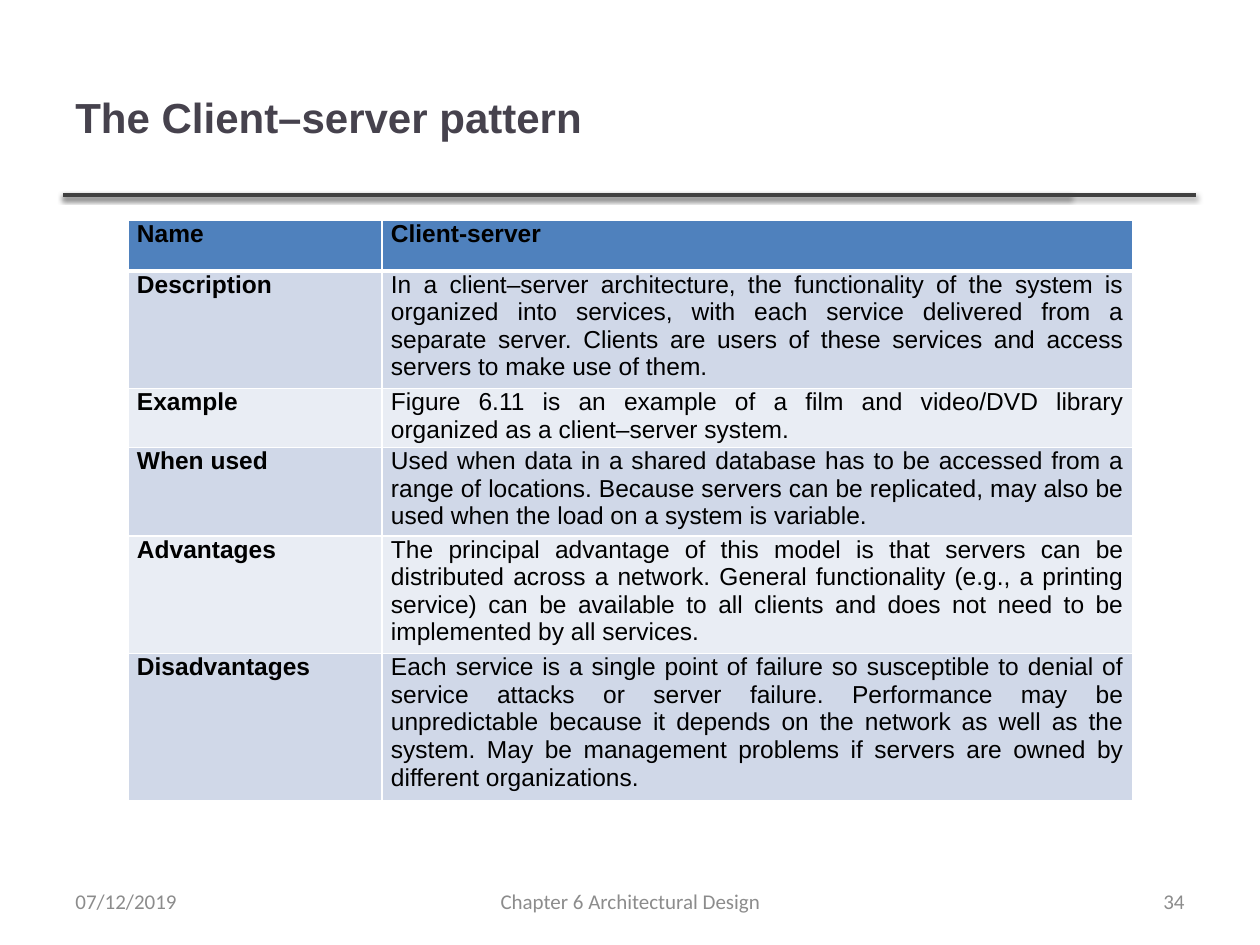
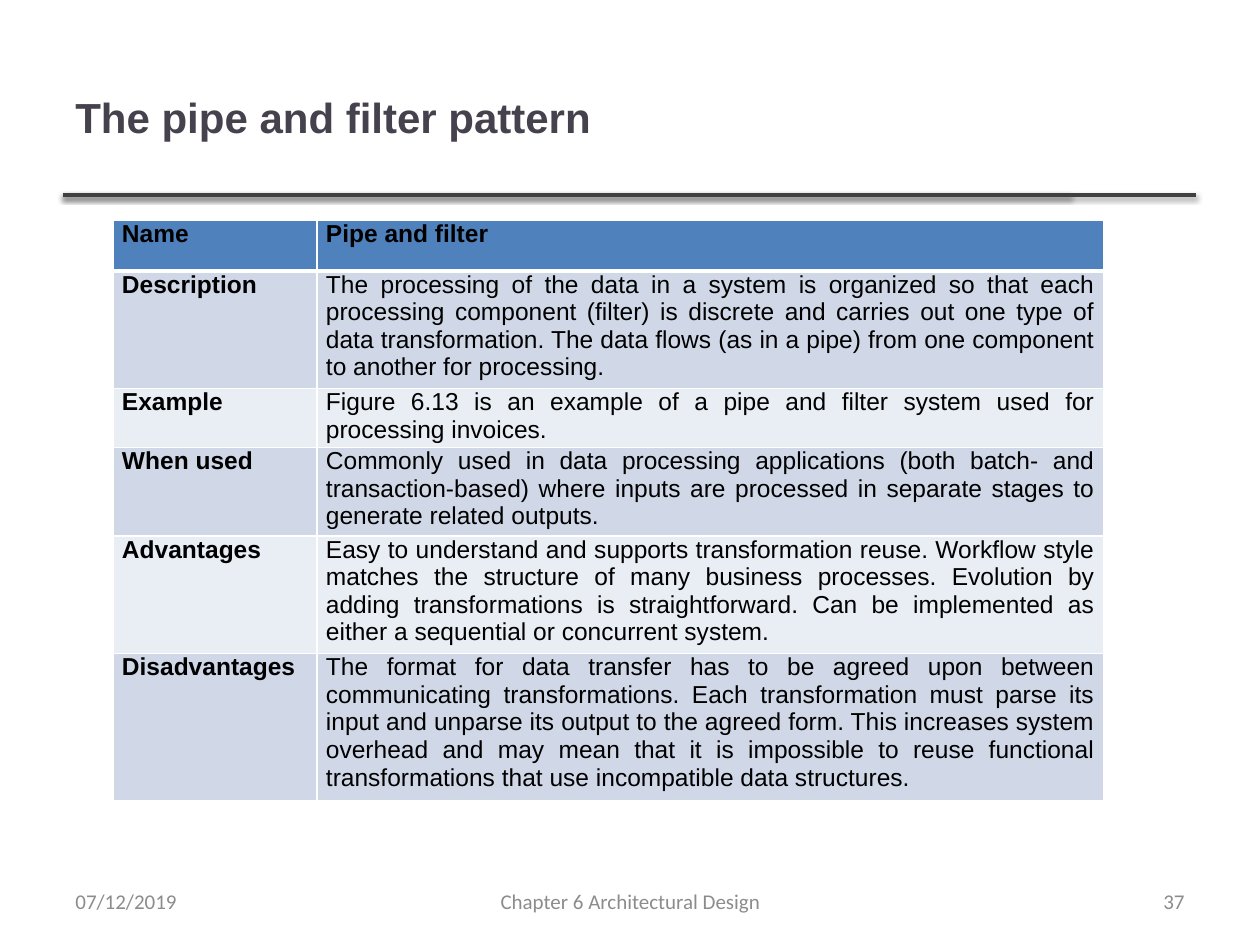
from lxml import etree
from pptx import Presentation
from pptx.dml.color import RGBColor
from pptx.enum.shapes import MSO_CONNECTOR
from pptx.enum.text import MSO_ANCHOR, PP_ALIGN
from pptx.oxml import parse_xml
from pptx.oxml.ns import nsdecls, qn
from pptx.util import Pt

DATE = "07/12/2019"
CHAPTER = "Chapter 6 Architectural Design"
LABELS = ("Name", "Description", "Example", "When used", "Advantages", "Disadvantages")
PATTERNS = [
    dict(
        title="The Client–server pattern", number="34", left=128, cols=(254, 751),
        entries=(
            "Client-server",
            "In a client–server architecture, the functionality of the system is organized into "
            "services, with each service delivered from a separate server. Clients are users of "
            "these services and access servers to make use of them.",
            "Figure 6.11 is an example of a film and video/DVD library organized as a "
            "client–server system.",
            "Used when data in a shared database has to be accessed from a range of locations. "
            "Because servers can be replicated, may also be used when the load on a system is "
            "variable.",
            "The principal advantage of this model is that servers can be distributed across a "
            "network. General functionality (e.g., a printing service) can be available to all "
            "clients and does not need to be implemented by all services.",
            "Each service is a single point of failure so susceptible to denial of service "
            "attacks or server failure. Performance may be unpredictable because it depends on "
            "the network as well as the system. May be management problems if servers are owned "
            "by different organizations.",
        ),
    ),
    dict(
        title="The pipe and filter pattern", number="37", left=113, cols=(204, 787),
        entries=(
            "Pipe and filter",
            "The processing of the data in a system is organized so that each processing "
            "component (filter) is discrete and carries out one type of data transformation. The "
            "data flows (as in a pipe) from one component to another for processing.",
            "Figure 6.13 is an example of a pipe and filter system used for processing invoices.",
            "Commonly used in data processing applications (both batch- and transaction-based) "
            "where inputs are processed in separate stages to generate related outputs.",
            "Easy to understand and supports transformation reuse. Workflow style matches the "
            "structure of many business processes. Evolution by adding transformations is "
            "straightforward. Can be implemented as either a sequential or concurrent system.",
            "The format for data transfer has to be agreed upon between communicating "
            "transformations. Each transformation must parse its input and unparse its output to "
            "the agreed form. This increases system overhead and may mean that it is impossible "
            "to reuse functional transformations that use incompatible data structures.",
        ),
    ),
]

TITLE_INK = RGBColor(0x46, 0x42, 0x4D)
FOOTER_INK = RGBColor(0x8C, 0x8C, 0x8C)
RULE = RGBColor(0x40, 0x40, 0x40)
BLACK = RGBColor(0x00, 0x00, 0x00)
WHITE = RGBColor(0xFF, 0xFF, 0xFF)
HEADER = RGBColor(0x4F, 0x81, 0xBD)
BANDS = (RGBColor(0xE9, 0xED, 0xF4), RGBColor(0xD0, 0xD8, 0xE8))

MARGIN = 63
RULE_Y = 195
RULE_ENDS = (1070, 1196)
TABLE_TOP = 220
ROW_HEIGHTS = (51, 110, 55, 82, 110, 138)
FOOTER_TOP, FOOTER_H = 876, 50


def px(n):
    return round(n * 914400 / 126)


def write(tf, text, size, color, font="Arial", bold=False, align=PP_ALIGN.LEFT):
    tf.word_wrap = True
    p = tf.paragraphs[0]
    p.alignment = align
    r = p.add_run()
    r.text = text
    r.font.name, r.font.size, r.font.bold = font, Pt(size), bold
    r.font.color.rgb = color


def add_text(s, box, text, **fmt):
    tf = s.shapes.add_textbox(*map(px, box)).text_frame
    tf.vertical_anchor = MSO_ANCHOR.MIDDLE
    write(tf, text, **fmt)


def add_rule(s, end):
    line = s.shapes.add_connector(MSO_CONNECTOR.STRAIGHT, px(MARGIN), px(RULE_Y), px(end), px(RULE_Y))
    line.line.color.rgb = RULE
    line.line.width = Pt(2)
    line._element.spPr.append(parse_xml(
        f'<a:effectLst {nsdecls("a")}><a:outerShdw blurRad="{Pt(3.1)}" dist="{Pt(1.6)}" '
        'dir="5400000" rotWithShape="0"><a:srgbClr val="000000"><a:alpha val="38000"/>'
        '</a:srgbClr></a:outerShdw></a:effectLst>'))


def set_borders(cell, **widths):
    """Draw white cell borders; widths are points by side L, R, T, B."""
    tcPr = cell._tc.get_or_add_tcPr()
    for i, (side, width) in enumerate(widths.items()):
        ln = etree.Element(qn(f"a:ln{side}"), w=str(Pt(width)))
        fill = etree.SubElement(ln, qn("a:solidFill"))
        etree.SubElement(fill, qn("a:srgbClr"), val=str(WHITE))
        tcPr.insert(i, ln)


def add_pattern_table(s, left, cols, entries):
    table = s.shapes.add_table(len(LABELS), 2, px(left), px(TABLE_TOP),
                               px(sum(cols)), px(sum(ROW_HEIGHTS))).table
    for col, width in zip(table.columns, cols):
        col.width = px(width)
    for i, pair in enumerate(zip(LABELS, entries)):
        table.rows[i].height = px(ROW_HEIGHTS[i])
        for j, text in enumerate(pair):
            cell = table.cell(i, j)
            cell.margin_left = cell.margin_right = px(9)
            cell.margin_top = cell.margin_bottom = 0
            cell.fill.solid()
            cell.fill.fore_color.rgb = BANDS[i % 2] if i else HEADER
            set_borders(cell, L=1, R=1, T=3 if i == 1 else 1, B=3 if i == 0 else 1)
            write(cell.text_frame, text, size=14, color=BLACK,
                  bold=i == 0 or j == 0, align=PP_ALIGN.JUSTIFY)


def add_footer(s, number):
    for left, width, text, align in (
        (MARGIN, 294, DATE, PP_ALIGN.LEFT),
        (431, 399, CHAPTER, PP_ALIGN.CENTER),
        (903, 294, number, PP_ALIGN.RIGHT),
    ):
        add_text(s, (left, FOOTER_TOP, width, FOOTER_H), text,
                 size=12, color=FOOTER_INK, font="Calibri", align=align)


def main():
    prs = Presentation()
    prs.slide_width, prs.slide_height = px(1260), px(945)
    for pattern in PATTERNS:
        s = prs.slides.add_slide(prs.slide_layouts[6])
        for end in RULE_ENDS:
            add_rule(s, end)
        add_text(s, (MARGIN, 38, 1005, 157), pattern["title"], size=24, color=TITLE_INK, bold=True)
        add_pattern_table(s, pattern["left"], pattern["cols"], pattern["entries"])
        add_footer(s, pattern["number"])
    prs.save("out.pptx")


if __name__ == "__main__":
    main()
